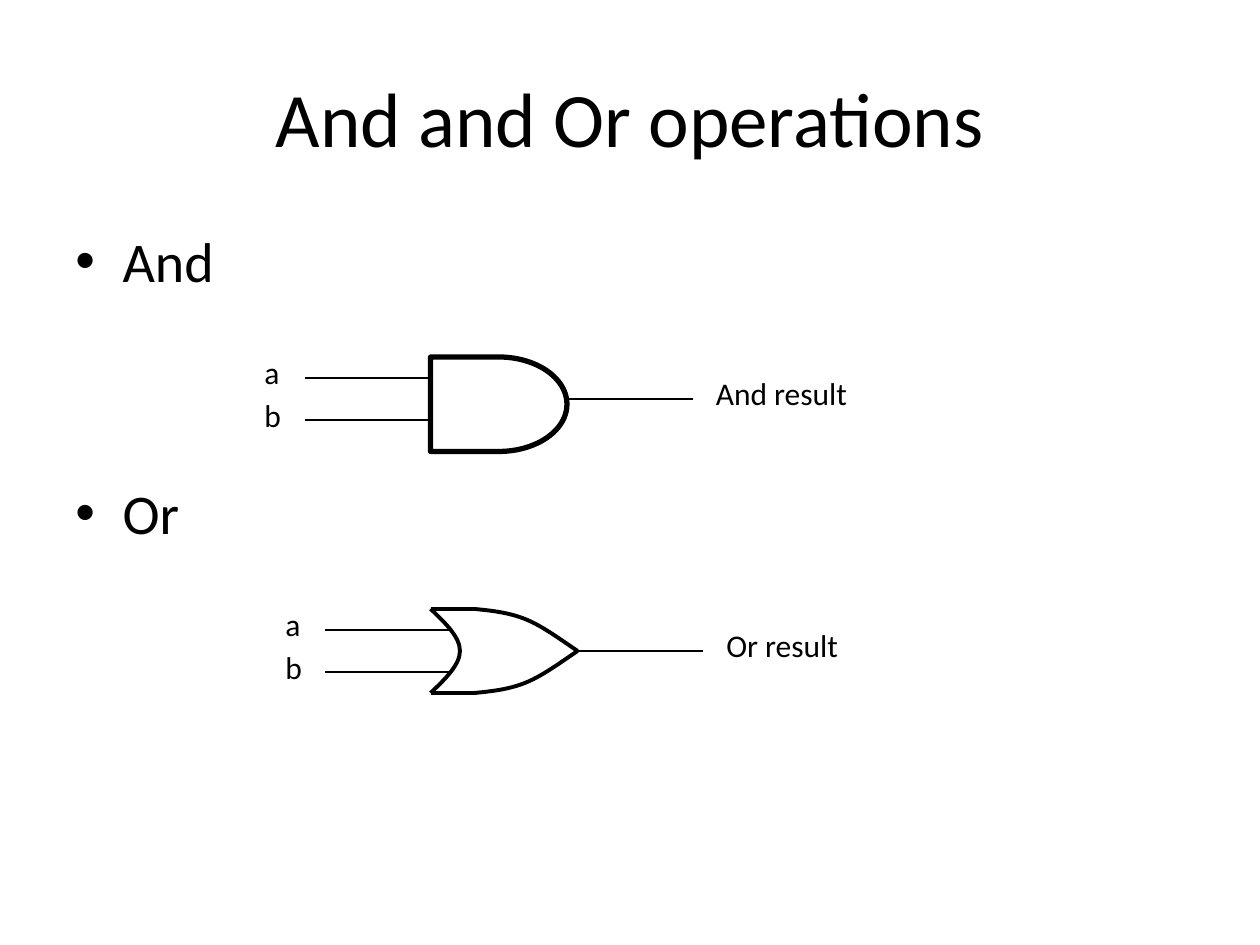
from lxml.etree import SubElement
from pptx import Presentation
from pptx.dml.color import RGBColor
from pptx.enum.shapes import MSO_CONNECTOR, MSO_SHAPE
from pptx.enum.text import MSO_ANCHOR, MSO_AUTO_SIZE, PP_ALIGN
from pptx.oxml.ns import qn
from pptx.util import Inches, Pt

COLORS = {"ink": "000000", "paper": "FFFFFF"}
FONT = "Calibri"
WIRE_WEIGHT = 0.75
WIRE_LENGTH = 1
INPUT_GAP = 0.333


def color(name):
    return RGBColor.from_string(COLORS[name])


def style_paragraph(para, size):
    para.font.name = FONT
    para.font.size = Pt(size)
    para.font.color.rgb = color("ink")


def style_outline(shape, weight):
    shape.line.color.rgb = color("ink")
    shape.line.width = Pt(weight)


def add_line(shapes, start, end, weight):
    line = shapes.add_connector(
        MSO_CONNECTOR.STRAIGHT, *(Inches(value) for value in (*start, *end)))
    style_outline(line, weight)
    SubElement(line._element.spPr, qn("a:effectLst"))


def add_curve(shapes, points, weight):
    """Draw an open cubic curve from a start point and three points per segment."""
    corners = [(Inches(x), Inches(y)) for x, y in points]
    builder = shapes.build_freeform(*corners[0])
    builder.add_line_segments(corners[1:], close=False)
    curve = builder.convert_to_shape()
    curve.fill.background()
    curve.shadow.inherit = False
    style_outline(curve, weight)

    outline = next(curve._element.iter(qn("a:path")))
    steps = outline.findall(qn("a:lnTo"))
    for first in range(0, len(steps), 3):
        segment = SubElement(outline, qn("a:cubicBezTo"))
        for step in steps[first:first + 3]:
            segment.append(step[0])
            outline.remove(step)


def add_title(page, text, left, top, width, height):
    title = page.shapes.title
    title.left, title.top = Inches(left), Inches(top)
    title.width, title.height = Inches(width), Inches(height)
    title.text_frame.text = text
    title.text_frame.vertical_anchor = MSO_ANCHOR.MIDDLE
    para = title.text_frame.paragraphs[0]
    para.alignment = PP_ALIGN.CENTER
    style_paragraph(para, 44)


def add_bullet(page, text, left, top, width, height):
    box = page.shapes.add_textbox(*map(Inches, (left, top, width, height)))
    box.text_frame.word_wrap = True
    para = box.text_frame.paragraphs[0]
    para.text = text
    para.space_before = Pt(6.4)
    style_paragraph(para, 32)
    properties = para._p.get_or_add_pPr()
    properties.set("marL", str(Inches(0.375)))
    properties.set("indent", str(Inches(-0.375)))
    SubElement(properties, qn("a:buFont"), typeface="Arial")
    SubElement(properties, qn("a:buChar"), char="•")
    # The schema wants bullets ahead of the default run properties.
    properties.append(properties.find(qn("a:defRPr")))


def add_label(page, text, left, top, width):
    box = page.shapes.add_textbox(*map(Inches, (left, top, width, 0.4)))
    box.text_frame.word_wrap = False
    box.text_frame.auto_size = MSO_AUTO_SIZE.SHAPE_TO_FIT_TEXT
    para = box.text_frame.paragraphs[0]
    para.text = text
    style_paragraph(para, 18)


def add_wiring(page, result, result_width, input_left, output_left, top):
    """Add the two inputs, the output wire and their labels; top is the first wire."""
    for row, (name, width) in enumerate((("a", 0.32), ("b", 0.34))):
        y = top + row * INPUT_GAP
        add_line(page.shapes, (input_left, y), (input_left + WIRE_LENGTH, y), WIRE_WEIGHT)
        add_label(page, name, input_left - 0.417, top - 0.25 + row * 0.345, width)
    y = top + INPUT_GAP / 2
    output_right = output_left + WIRE_LENGTH
    add_line(page.shapes, (output_left, y), (output_right, y), WIRE_WEIGHT)
    add_label(page, result, output_right + 0.083, y - 0.25, result_width)


def add_and_gate(page, left, top, width, height):
    gate = page.shapes.add_shape(
        MSO_SHAPE.FLOWCHART_DELAY, *map(Inches, (left, top, width, height)))
    gate.fill.background()
    gate.shadow.inherit = False
    style_outline(gate, 3)


def add_or_gate(page, left, top, width, height):
    """Group the mirrored upper and lower edges with the curved back."""
    shapes = page.shapes.add_group_shape().shapes
    weight = 2.25
    half = height / 2
    middle = top + half
    shoulder = left + 0.3 * width
    nose = 0.7 * width
    for side in (1, -1):
        edge = middle + side * half
        add_line(shapes, (left, edge), (shoulder, edge), weight)
        # Offsets along the nose, and heights as shares of the half height.
        offsets = ((0, 1), (0.16, 0.96), (0.33, 0.92), (0.5, 0.75),
                   (0.66, 0.59), (0.83, 0.28), (1, 0))
        add_curve(shapes, [(shoulder + x * nose, middle + side * y * half)
                           for x, y in offsets], weight)
    depth = 0.2 * width
    back = ((0, 1), (0.5, 0.67), (1, 0.33), (1, 0), (1, -0.33), (0.5, -0.67), (0, -1))
    add_curve(shapes, [(left + x * depth, middle + y * half) for x, y in back], weight)


def main():
    deck = Presentation()
    deck.slide_width, deck.slide_height = Inches(10), Inches(7.5)
    page = deck.slides.add_slide(deck.slide_layouts[5])
    page.background.fill.solid()
    page.background.fill.fore_color.rgb = color("paper")

    add_title(page, "And and Or operations", 0.5, 0.3, 9, 1.25)
    add_bullet(page, "And", 0.5, 1.75, 9, 0.75)
    add_wiring(page, "And result", 1.26, input_left=2.417, output_left=4.5, top=3)
    add_and_gate(page, 3.417, 2.833, 1.083, 0.75)
    add_bullet(page, "Or", 0.5, 3.75, 9, 0.75)
    add_or_gate(page, 3.417, 4.833, 1.167, 0.667)
    add_wiring(page, "Or result", 1.1, input_left=2.583, output_left=4.583, top=5)
    deck.save("out.pptx")


if __name__ == "__main__":
    main()
